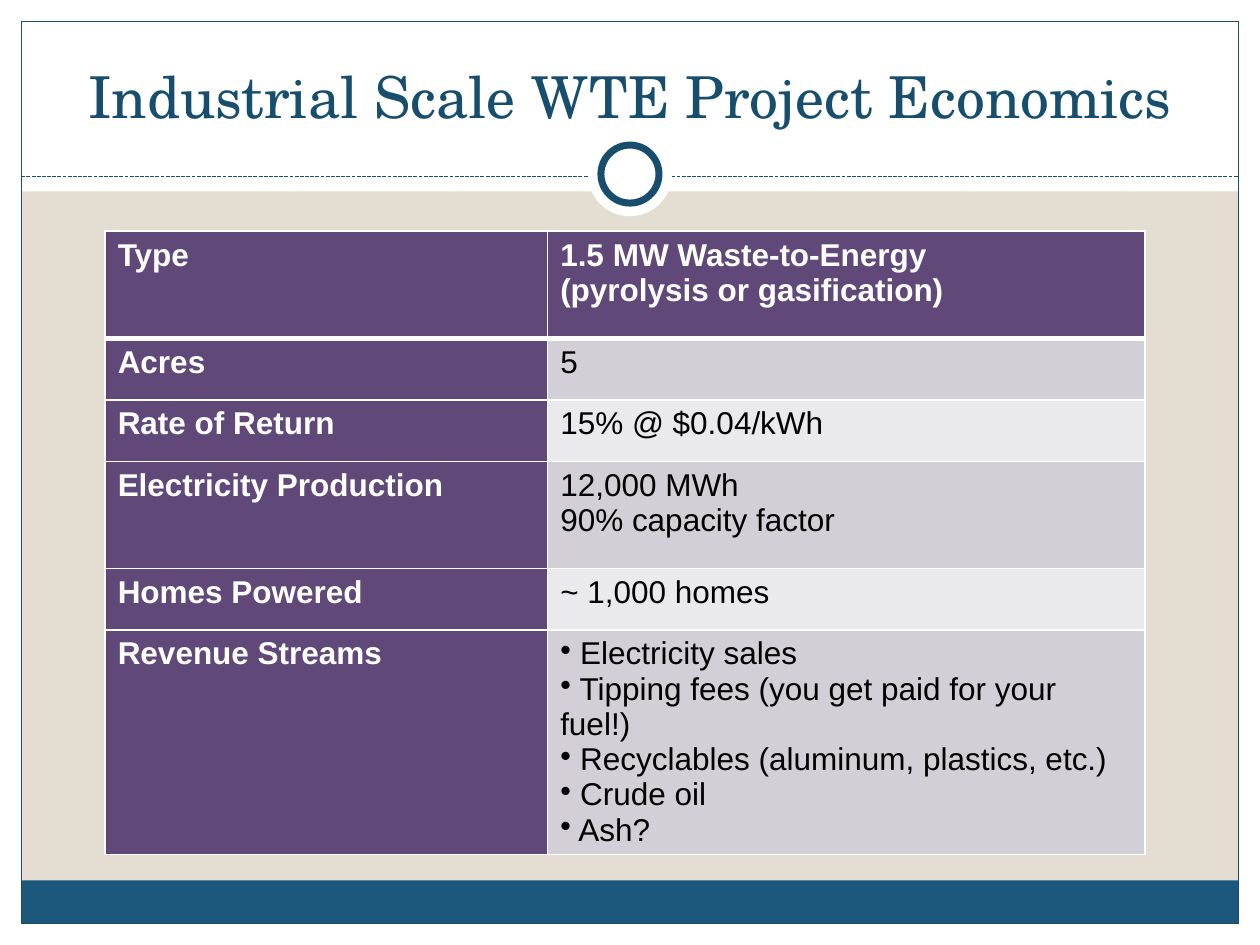
from lxml import etree
from pptx import Presentation
from pptx.dml.color import RGBColor
from pptx.enum import dml, shapes, text
from pptx.oxml.ns import qn
from pptx.util import Cm, Pt

SAND = RGBColor(0xE3, 0xDE, 0xD1)
WHITE = RGBColor(0xFF, 0xFF, 0xFF)
BLACK = RGBColor(0, 0, 0)
NAVY = RGBColor(0x18, 0x4E, 0x6D)
BLUE = RGBColor(0x1B, 0x58, 0x7C)
PURPLE = RGBColor(0x60, 0x48, 0x78)
BAND_DARK = RGBColor(0xD2, 0xCF, 0xD6)
BAND_LIGHT = RGBColor(0xEA, 0xE9, 0xEC)

WIDTH, HEIGHT, MARGIN = 25.4, 19.05, 0.43
RULE_Y = 3.56
RECT, OVAL = shapes.MSO_SHAPE.RECTANGLE, shapes.MSO_SHAPE.OVAL

COLUMN_WIDTHS = (8.92, 12.04)
ECONOMICS = [  # label, values, row height in cm
    ("Type", ["1.5 MW Waste-to-Energy", "(pyrolysis or gasification)"], 2.16),
    ("Acres", ["5"], 1.24),
    ("Rate of Return", ["15% @ $0.04/kWh"], 1.24),
    ("Electricity Production", ["12,000 MWh", "90% capacity factor"], 2.16),
    ("Homes Powered", ["~ 1,000 homes"], 1.24),
    ("Revenue Streams", [" Electricity sales",
                         " Tipping fees (you get paid for your fuel!)",
                         " Recyclables (aluminum, plastics, etc.)",
                         " Crude oil", " Ash?"], 4.53),
]
BULLETED = "Revenue Streams"
LABEL_FONT = {"name": "Arial", "size": Pt(18), "bold": True}
VALUE_FONT = {**LABEL_FONT, "bold": False}
TITLE_FONT = {"name": "TeX Gyre Schola", "size": Pt(33), "bold": False}


def style_font(font, values, color):
    for name, value in values.items():
        setattr(font, name, value)
    font.color.rgb = color


def add_panel(slide, kind, box, fill=None, line_width=None):
    panel = slide.shapes.add_shape(kind, *map(Cm, box))
    panel.shadow.inherit = False
    if fill is None:
        panel.fill.background()
    else:
        panel.fill.solid()
        panel.fill.fore_color.rgb = fill
    if line_width is None:
        panel.line.fill.background()
    else:
        panel.line.color.rgb = NAVY
        panel.line.width = Pt(line_width)


def add_dashed_rule(slide):
    y = Cm(RULE_Y)
    rule = slide.shapes.add_connector(shapes.MSO_CONNECTOR.STRAIGHT,
                                      Cm(MARGIN), y, Cm(WIDTH - MARGIN), y)
    rule.line.color.rgb = NAVY
    rule.line.width = Pt(0.75)
    rule.line.dash_style = dml.MSO_LINE.SQUARE_DOT
    properties = rule._element.spPr
    dash = properties.find(".//" + qn("a:prstDash"))
    dash.set("val", "sysDash")
    etree.SubElement(properties, qn("a:effectLst"))


def add_backdrop(slide):
    slide.background.fill.solid()
    slide.background.fill.fore_color.rgb = SAND
    inner_width, inner_height = WIDTH - 2 * MARGIN, HEIGHT - 2 * MARGIN
    for box in ((0, HEIGHT - MARGIN, WIDTH, MARGIN), (0, 0, WIDTH, 3.86),
                (0, 0, MARGIN, HEIGHT), (WIDTH - MARGIN, 0, MARGIN, HEIGHT)):
        add_panel(slide, RECT, box, WHITE)
    add_panel(slide, RECT, (MARGIN, 17.75, inner_width, 0.87), BLUE)
    add_panel(slide, RECT, (MARGIN, MARGIN, inner_width, inner_height), line_width=0.75)
    add_dashed_rule(slide)
    for size, line_width in ((1.7, None), (1.17, 4)):
        box = ((WIDTH - size) / 2, 3.51 - size / 2, size, size)
        add_panel(slide, OVAL, box, WHITE, line_width)


def set_title(slide, wording):
    title = slide.shapes.title
    title.left, title.top, title.width, title.height = map(Cm, (0.85, 0.64, 23.7, 2.11))
    frame = title.text_frame
    frame.text = wording
    frame.word_wrap = True
    frame.auto_size = text.MSO_AUTO_SIZE.NONE
    frame.vertical_anchor = text.MSO_ANCHOR.BOTTOM
    frame.paragraphs[0].alignment = text.PP_ALIGN.CENTER
    style_font(frame.paragraphs[0].font, TITLE_FONT, NAVY)
    # Bring the title in front of the white header band
    title._element.getparent().append(title._element)


def add_borders(cell, **widths):
    """Draw white cell borders; widths in points by side (L, R, T, B), 1 by default."""
    properties = cell._tc.get_or_add_tcPr()
    for side in "LRTB":
        line = etree.SubElement(properties, qn("a:ln" + side),
                                w=str(Pt(widths.get(side, 1))))
        fill = etree.SubElement(line, qn("a:solidFill"))
        etree.SubElement(fill, qn("a:srgbClr"), val=str(WHITE))


def add_bullet(paragraph):
    properties = paragraph._p.get_or_add_pPr()
    properties.set("marL", "0")
    properties.set("indent", "0")
    etree.SubElement(properties, qn("a:buChar"), char="•")


def fill_cell(cell, lines, fill, font, color, bulleted=False, **border_widths):
    add_borders(cell, **border_widths)
    cell.fill.solid()
    cell.fill.fore_color.rgb = fill
    cell.text_frame.text = "\n".join(lines)
    for paragraph in cell.text_frame.paragraphs:
        if bulleted:
            add_bullet(paragraph)
        style_font(paragraph.font, font, color)


def add_economics_table(slide):
    heights = [height for _, _, height in ECONOMICS]
    table = slide.shapes.add_table(
        len(ECONOMICS), len(COLUMN_WIDTHS), Cm(2.12), Cm(4.66),
        Cm(sum(COLUMN_WIDTHS)), Cm(sum(heights))).table
    for column, width in zip(table.columns, COLUMN_WIDTHS):
        column.width = Cm(width)
    for index, (label, values, height) in enumerate(ECONOMICS):
        table.rows[index].height = Cm(height)
        borders = {0: {"B": 3}, 1: {"T": 3}}.get(index, {})
        if index == 0:
            value_style = (PURPLE, LABEL_FONT, WHITE)
        else:
            value_style = (BAND_DARK if index % 2 else BAND_LIGHT, VALUE_FONT, BLACK)
        fill_cell(table.cell(index, 0), [label], PURPLE, LABEL_FONT, WHITE, **borders)
        fill_cell(table.cell(index, 1), values, *value_style,
                  bulleted=label == BULLETED, **borders)


def main():
    deck = Presentation()
    deck.slide_width, deck.slide_height = Cm(WIDTH), Cm(HEIGHT)
    slide = deck.slides.add_slide(deck.slide_layouts[5])
    add_backdrop(slide)
    set_title(slide, "Industrial Scale WTE Project Economics")
    add_economics_table(slide)
    deck.save("out.pptx")


if __name__ == "__main__":
    main()
